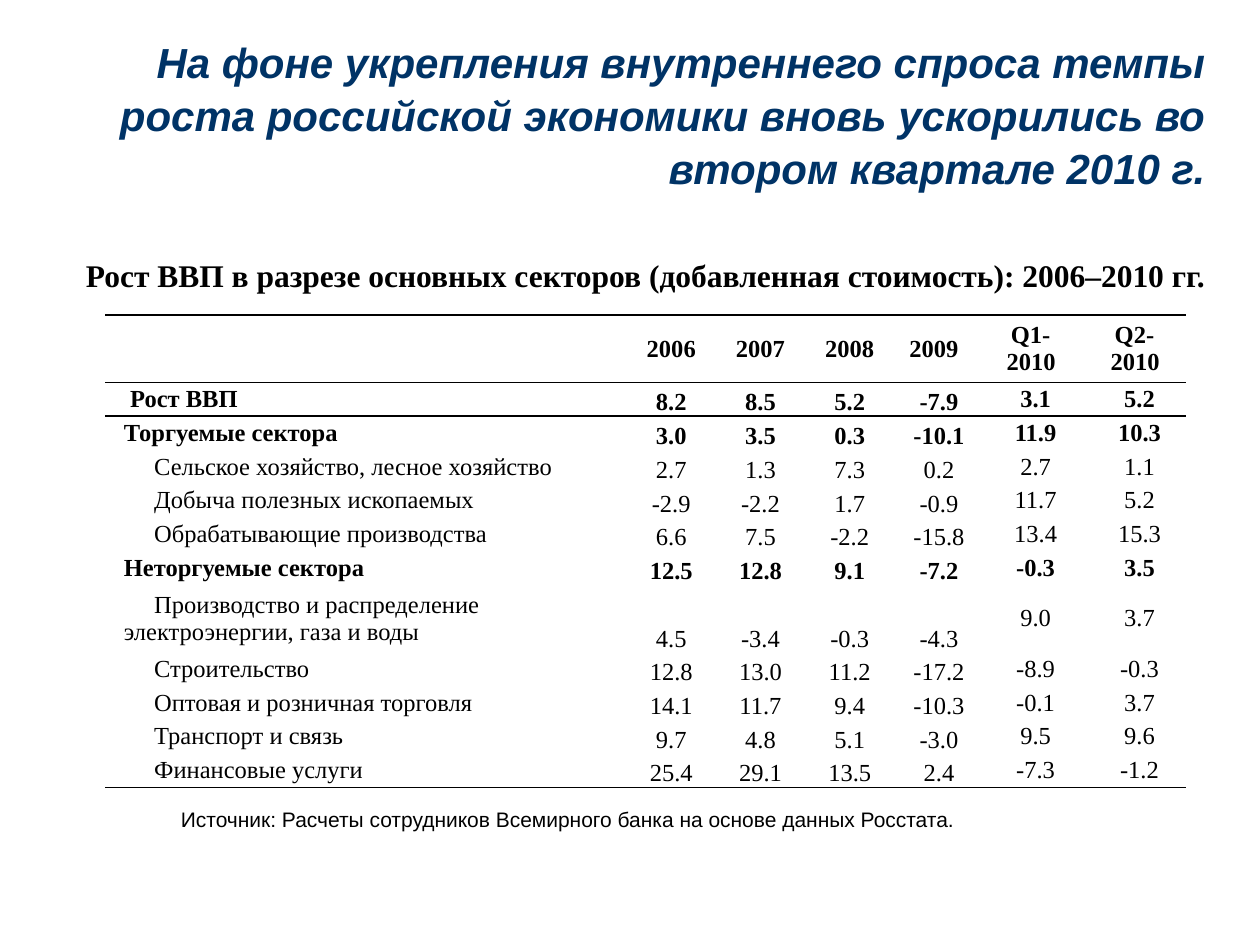
from lxml.etree import SubElement
from pptx import Presentation
from pptx.dml.color import RGBColor
from pptx.enum.text import MSO_ANCHOR as Anchor, MSO_AUTO_SIZE as AutoSize, PP_ALIGN as Align
from pptx.oxml.ns import qn
from pptx.util import Inches, Pt

NAVY = RGBColor(0x00, 0x33, 0x66)
BLACK = RGBColor(0x00, 0x00, 0x00)
SANS, SERIF = "Arial", "Times New Roman"
NO_GRID_STYLE = "{2D5ABB26-0587-4C30-8999-92F81FD0307C}"
GRID_COLUMNS, GRID_ROWS = 120, 90
COLUMN_WIDTHS = [49.2, 8.5, 8.5, 8.5, 8.5, 9.9, 9.9]
TOTAL, GROUP, SECTOR = 0.05, 0, 0.24

HEADINGS = ["", "2006", "2007", "2008", "2009", "Q1- 2010", "Q2-2010"]
GROWTH = [
    (TOTAL, 1, "Рост ВВП", "8.2 8.5 5.2 -7.9 3.1 5.2"),
    (GROUP, 1, "Торгуемые сектора", "3.0 3.5 0.3 -10.1 11.9 10.3"),
    (SECTOR, 1, "Сельское хозяйство, лесное хозяйство", "2.7 1.3 7.3 0.2 2.7 1.1"),
    (SECTOR, 1, "Добыча полезных ископаемых", "-2.9 -2.2 1.7 -0.9 11.7 5.2"),
    (SECTOR, 1, "Обрабатывающие производства", "6.6 7.5 -2.2 -15.8 13.4 15.3"),
    (GROUP, 1, "Неторгуемые сектора", "12.5 12.8 9.1 -7.2 -0.3 3.5"),
    (SECTOR, 2, "Производство и распределение электроэнергии, газа и воды",
     "4.5 -3.4 -0.3 -4.3 9.0 3.7"),
    (SECTOR, 1, "Строительство", "12.8 13.0 11.2 -17.2 -8.9 -0.3"),
    (SECTOR, 1, "Оптовая и розничная торговля", "14.1 11.7 9.4 -10.3 -0.1 3.7"),
    (SECTOR, 1, "Транспорт и связь", "9.7 4.8 5.1 -3.0 9.5 9.6"),
    (SECTOR, 1, "Финансовые услуги", "25.4 29.1 13.5 2.4 -7.3 -1.2"),
]


class SlideBuilder:
    def __init__(self, deck):
        self.unit_x = deck.slide_width / GRID_COLUMNS
        self.unit_y = deck.slide_height / GRID_ROWS
        self.slide = deck.slides.add_slide(deck.slide_layouts[5])

    def place(self, left, top, width, height):
        return (round(left * self.unit_x), round(top * self.unit_y),
                round(width * self.unit_x), round(height * self.unit_y))

    def indent(self, para, margin, first_line):
        properties = para._p.get_or_add_pPr()
        properties.set("marL", str(Inches(margin)))
        properties.set("indent", str(Inches(first_line)))

    def fill_para(self, para, text, font, size, color=BLACK, bold=False, italic=False,
                  align=Align.LEFT):
        para.text = text
        para.alignment = align
        style = para.font
        style.name, style.size = font, Pt(size)
        style.bold, style.italic = bold, italic
        style.color.rgb = color

    def title(self, area, text):
        box = self.slide.shapes.title
        box.left, box.top, box.width, box.height = self.place(*area)
        frame = box.text_frame
        frame.auto_size = AutoSize.NONE
        frame.vertical_anchor = Anchor.BOTTOM
        para = frame.paragraphs[0]
        self.fill_para(para, text, SANS, 24, NAVY, True, True, Align.RIGHT)
        para.line_spacing = 1.05

    def text(self, area, text, font, size, bold=False, align=Align.LEFT, first_line=0):
        frame = self.slide.shapes.add_textbox(*self.place(*area)).text_frame
        frame.word_wrap = True
        frame.vertical_anchor = Anchor.MIDDLE
        para = frame.paragraphs[0]
        self.indent(para, 0, first_line)
        self.fill_para(para, text, font, size, bold=bold, align=align)

    def border(self, cell, side):
        line = SubElement(cell._tc.get_or_add_tcPr(), qn(f"a:ln{side}"), w=str(Pt(1)))
        fill = SubElement(line, qn("a:solidFill"))
        SubElement(fill, qn("a:srgbClr"), val=str(BLACK))

    def cell(self, cell, text, bold, align, anchor, margin, first_line, sides):
        for side in sides:
            self.border(cell, side)
        cell.fill.background()
        cell.margin_left = cell.margin_right = Inches(0.07)
        cell.margin_top = cell.margin_bottom = 0
        cell.vertical_anchor = anchor
        para = cell.text_frame.paragraphs[0]
        self.indent(para, margin, first_line)
        self.fill_para(para, text, SERIF, 14, bold=bold, align=align)

    def table(self, area, headings, records):
        left, top, width, height = self.place(*area)
        table = self.slide.shapes.add_table(
            len(records) + 1, len(headings), left, top, width, height).table
        table.first_row = table.horz_banding = False
        table._tbl.tblPr.find(qn("a:tableStyleId")).text = NO_GRID_STYLE
        for column, units in zip(table.columns, COLUMN_WIDTHS):
            column.width = round(units * self.unit_x)
        line_counts = [2] + [lines for _, lines, _, _ in records]
        for row, lines in zip(table.rows, line_counts):
            row.height = round(height * lines / sum(line_counts))

        for number, heading in enumerate(headings):
            margin, first_line = (0.08, 0) if number < 4 else (0.01, -0.06)
            self.cell(table.cell(0, number), heading, True, Align.CENTER,
                      Anchor.MIDDLE, margin, first_line, "TB")
        for index, (level, _, label, values) in enumerate(records, 1):
            sides = {1: "T", len(records): "B"}.get(index, "")
            bold = level != SECTOR
            self.cell(table.cell(index, 0), label, bold, Align.LEFT,
                      Anchor.MIDDLE, 0.08, level, sides)
            for number, value in enumerate(values.split(), 1):
                anchor = Anchor.BOTTOM if number < 5 else Anchor.MIDDLE
                self.cell(table.cell(index, number), value, bold, Align.CENTER,
                          anchor, 0.08, 0, sides)


def main():
    deck = Presentation()
    deck.slide_width, deck.slide_height = Inches(10), Inches(7.5)
    builder = SlideBuilder(deck)
    builder.title((7, 5, 109, 14),
                  "На фоне укрепления внутреннего спроса темпы роста российской "
                  "экономики вновь ускорились во втором квартале 2010 г.")
    builder.text((11, 76.2, 94, 3.6),
                 "Источник: Расчеты сотрудников Всемирного банка на основе данных Росстата.",
                 SANS, 12, align=Align.JUSTIFY, first_line=0.42)
    builder.table((10, 30, 103, 45), HEADINGS, GROWTH)
    builder.text((7, 23.8, 113, 4.8),
                 "Рост ВВП в разрезе основных секторов (добавленная стоимость): 2006–2010 гг.",
                 SERIF, 18, bold=True)
    deck.save("out.pptx")


if __name__ == "__main__":
    main()
